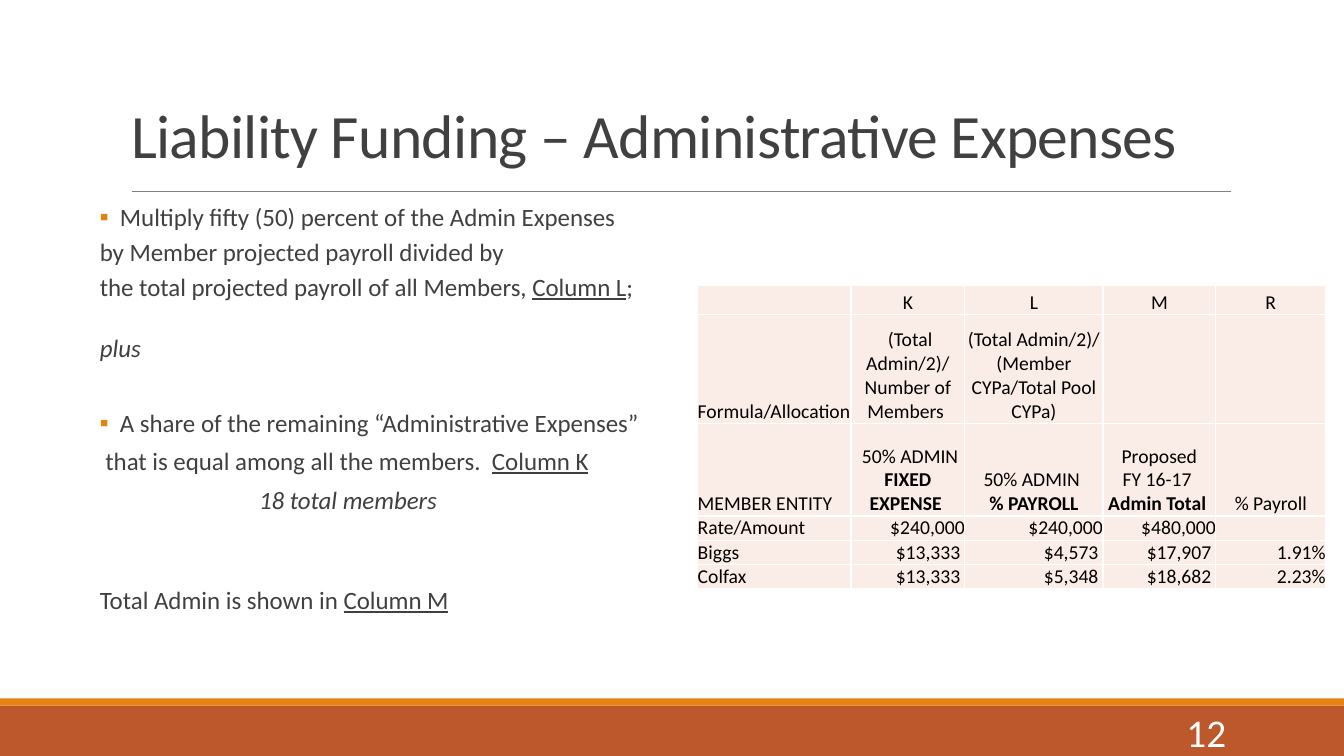
"""Build the slide on liability funding of administrative expenses."""
from pptx import Presentation
from pptx.dml.color import RGBColor
from pptx.enum.shapes import MSO_CONNECTOR as CONN, MSO_SHAPE as SHAPE
from pptx.enum.text import MSO_ANCHOR as ANCHOR, MSO_AUTO_SIZE as AUTO, PP_ALIGN as ALIGN
from pptx.oxml.ns import qn
from pptx.util import Inches, Pt
from lxml.etree import SubElement

WHITE = RGBColor(0xFF, 0xFF, 0xFF)
BLACK = RGBColor(0, 0, 0)
TEXT = RGBColor(0x40, 0x40, 0x40)
RULE = RGBColor(0x80, 0x80, 0x80)
ORANGE = RGBColor(0xE4, 0x83, 0x12)
RUST = RGBColor(0xBD, 0x58, 0x2C)
BLUSH = RGBColor(0xFA, 0xED, 0xE7)

TITLE = "Liability Funding – Administrative Expenses"
PAGE = "12"
BANDS = [(7, 0.5, RUST), (6.93, 0.07, ORANGE)]
# runs, bullet, left indent, line spacing, space before
BODY = [
    ([("Multiply fifty (50) percent of the Admin Expenses", "")], True, 0.42, 0.9, 0),
    ([("by Member projected payroll divided by", "")], False, 0.22, 0.9, 2),
    ([("the total projected payroll of all Members, ", ""), ("Column L", "u"), (";", "")],
     False, 0.22, 0.9, 2),
    ([("plus", "i")], False, 0.22, 0.7, 23.7),
    ([("A share of the remaining “Administrative Expenses”", "")], True, 0.42, 1, 28.6),
    ([(" that is equal among all the members.  ", ""), ("Column K", "u")], False, 0.22, 1, 2),
    ([("18 total members", "i")], False, 1.8, 1, 2),
    ([("Total Admin is shown in ", ""), ("Column M", "u")], False, 0.22, 0.7, 52.2),
]
COLS = [1.52, 1.13, 1.37, 1.12, 1.09]
ROWS = [0.29, 1.08, 0.92, 0.24, 0.24, 0.24]
HEADER_ROWS = 3
CELLS = [
    ["", "K", " L ", "M", "R"],
    ["Formula/Allocation", " (Total Admin/2)/ Number of Members ",
     "(Total Admin/2)/ (Member CYPa/Total Pool CYPa)", "", ""],
    ["MEMBER ENTITY", [[(" 50% ADMIN ", ""), ("FIXED EXPENSE ", "b")]],
     [[("50% ADMIN ", "")], [("% PAYROLL", "b")]],
     [[("Proposed", "")], [("FY 16-17 ", "")], [("Admin Total ", "b")]], "% Payroll"],
    ["Rate/Amount", "$240,000", "$240,000", "$480,000", ""],
    ["Biggs", "$13,333 ", "$4,573 ", "$17,907 ", "1.91%"],
    ["Colfax", "$13,333 ", "$5,348 ", "$18,682 ", "2.23%"],
]


def write(p, text, size=14, color=BLACK, style="", align=ALIGN.LEFT):
    """Add one formatted run to a paragraph."""
    p.alignment = align
    r = p.add_run()
    r.text = text
    f = r.font
    f.name, f.size, f.color.rgb = "Calibri", Pt(size), color
    f.bold, f.italic, f.underline = "b" in style, "i" in style, "u" in style
    return r


def place(shape, x, y, w, h):
    """Move and size a shape in inches."""
    shape.left, shape.top, shape.width, shape.height = map(Inches, (x, y, w, h))


def add_bullet(pPr):
    """Give a paragraph the orange square bullet."""
    clr = SubElement(pPr, qn("a:buClr"))
    SubElement(clr, qn("a:srgbClr")).set("val", str(ORANGE))
    SubElement(pPr, qn("a:buFont")).set("typeface", "Calibri")
    SubElement(pPr, qn("a:buChar")).set("char", "▪")


def add_body(s):
    """Write the explanation on the left."""
    tb = s.shapes.add_textbox(Inches(0.77), Inches(1.57), Inches(6.14), Inches(5.15))
    tf = tb.text_frame
    tf.word_wrap = True
    tf.margin_left = tf.margin_right = 0
    tf.margin_top = Inches(0.46)
    for i, (runs, bullet, left, spacing, before) in enumerate(BODY):
        p = tf.add_paragraph() if i else tf.paragraphs[0]
        p.line_spacing, p.space_before, p.space_after = spacing, Pt(before), Pt(4)
        pPr = p._p.get_or_add_pPr()
        pPr.set("marL", str(Inches(left)))
        pPr.set("indent", str(Inches(-0.2 if bullet else 0)))
        if bullet:
            add_bullet(pPr)
        for text, style in runs:
            write(p, text, size=17.8, color=TEXT, style=style)


def format_cell(cell):
    """Set fill, margins, anchor and white borders of a cell."""
    cell.margin_left = cell.margin_right = cell.margin_top = cell.margin_bottom = 0
    cell.vertical_anchor = ANCHOR.BOTTOM
    tcPr = cell._tc.get_or_add_tcPr()
    for side in ("lnL", "lnR", "lnT", "lnB"):
        ln = SubElement(tcPr, qn(f"a:{side}"))
        ln.set("w", str(Pt(1)))
        fill = SubElement(ln, qn("a:solidFill"))
        SubElement(fill, qn("a:srgbClr")).set("val", str(WHITE))
    cell.fill.solid()
    cell.fill.fore_color.rgb = BLUSH


def add_table(s):
    """Draw the allocation table."""
    frame = s.shapes.add_table(len(ROWS), len(COLS), Inches(6.92), Inches(2.83),
                               Inches(sum(COLS)), Inches(sum(ROWS)))
    table = frame.table
    table.first_row = table.horz_banding = False
    for col, w in zip(table.columns, COLS):
        col.width = Inches(w)
    for i, (row, h) in enumerate(zip(table.rows, ROWS)):
        row.height = Inches(h)
        for j, (cell, content) in enumerate(zip(row.cells, CELLS[i])):
            format_cell(cell)
            tf = cell.text_frame
            if not content:
                tf.paragraphs[0]._p.get_or_add_endParaRPr().set("sz", "1400")
                continue
            number_align = ALIGN.CENTER if i < HEADER_ROWS else ALIGN.RIGHT
            align = number_align if j else ALIGN.LEFT
            lines = [[(content, "")]] if isinstance(content, str) else content
            for k, runs in enumerate(lines):
                p = tf.add_paragraph() if k else tf.paragraphs[0]
                for text, style in runs:
                    write(p, text, style=style, align=align)


def main():
    """Assemble and save the slide."""
    prs = Presentation()
    prs.slide_width, prs.slide_height = Inches(13.33), Inches(7.5)
    s = prs.slides.add_slide(prs.slide_layouts[5])
    for y, h, color in BANDS:
        band = s.shapes.add_shape(SHAPE.RECTANGLE, 0, Inches(y), prs.slide_width, Inches(h))
        band.shadow.inherit = False
        band.fill.solid()
        band.fill.fore_color.rgb = color
        band.line.fill.background()
    rule = s.shapes.add_connector(CONN.STRAIGHT, Inches(1.31), Inches(1.9),
                                  Inches(12.21), Inches(1.9))
    rule.line.color.rgb, rule.line.width = RULE, Pt(0.5)
    SubElement(rule._element.spPr, qn("a:effectLst"))

    title = s.shapes.title
    place(title, 1.2, 0.16, 11.16, 1.59)
    tf = title.text_frame
    tf.auto_size, tf.word_wrap, tf.vertical_anchor = AUTO.NONE, True, ANCHOR.BOTTOM
    tf.paragraphs[0].line_spacing = 0.85
    r = write(tf.paragraphs[0], TITLE, size=44, color=TEXT)
    r.font._element.set("spc", "-50")

    add_body(s)
    add_table(s)
    tf = s.shapes.add_textbox(Inches(10.83), Inches(7.06), Inches(1.43), Inches(0.4)).text_frame
    tf.word_wrap, tf.vertical_anchor = True, ANCHOR.MIDDLE
    write(tf.paragraphs[0], PAGE, size=28, color=WHITE, align=ALIGN.RIGHT)
    prs.save("out.pptx")


if __name__ == "__main__":
    main()
